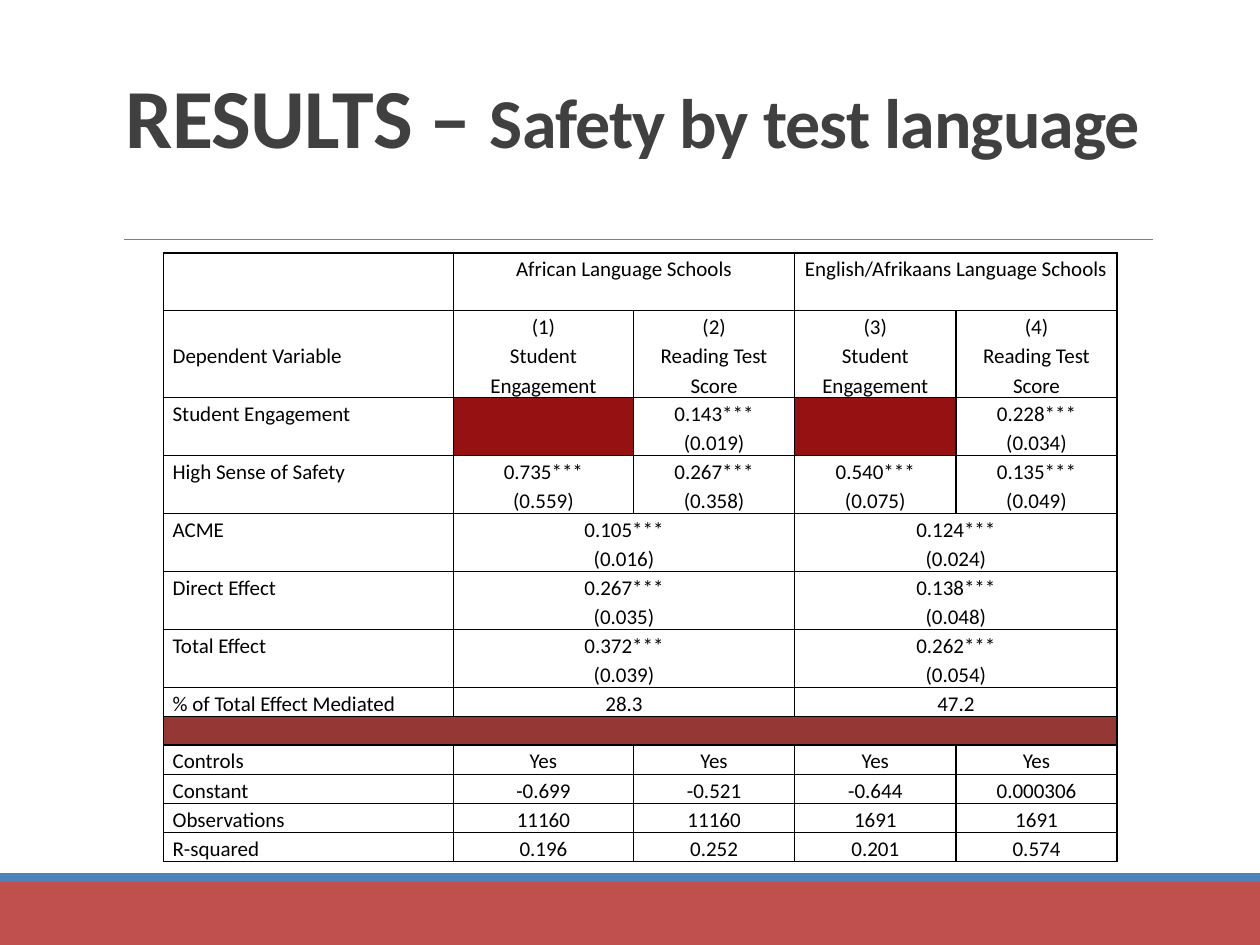
from lxml import etree
from pptx import Presentation
from pptx.dml.color import RGBColor
from pptx.enum.shapes import MSO_CONNECTOR, MSO_SHAPE
from pptx.enum.text import MSO_ANCHOR, PP_ALIGN
from pptx.oxml.ns import qn
from pptx.util import Cm, Pt

RECT = MSO_SHAPE.RECTANGLE
STRAIGHT = MSO_CONNECTOR.STRAIGHT
LEFT, CENTER = PP_ALIGN.LEFT, PP_ALIGN.CENTER
TOP, MIDDLE, BOTTOM = MSO_ANCHOR.TOP, MSO_ANCHOR.MIDDLE, MSO_ANCHOR.BOTTOM

FONT = "Calibri"
COLORS = {
    "title": "404040",
    "text": "000000",
    "rule": "808080",
    "footer": "C0504D",
    "stripe": "4F81BD",
    "empty": "961212",
    "divider": "953735",
}

COL_WIDTHS = [5.84, 3.63, 3.25, 3.25, 3.25]
LINE_HEIGHT = 0.58
ROW_LINES = [2, 3] + [2] * 5 + [1] * 6

# None continues the merged cell on its left.
ROWS = [
    ["", "African Language Schools", None, "English/Afrikaans Language Schools", None],
    ["Dependent Variable", "(1)\nStudent Engagement", "(2)\nReading Test Score",
     "(3)\nStudent Engagement", "(4)\nReading Test Score"],
    ["Student Engagement", "", "0.143***\n(0.019)", "", "0.228***\n(0.034)"],
    ["High Sense of Safety", "0.735***\n(0.559)", "0.267***\n(0.358)",
     "0.540***\n(0.075)", "0.135***\n(0.049)"],
    ["ACME", "0.105***\n(0.016)", None, "0.124***\n(0.024)", None],
    ["Direct Effect", "0.267***\n(0.035)", None, "0.138***\n(0.048)", None],
    ["Total Effect", "0.372***\n(0.039)", None, "0.262***\n(0.054)", None],
    ["% of Total Effect Mediated", "28.3", None, "47.2", None],
    ["", None, None, None, None],
    ["Controls", "Yes", "Yes", "Yes", "Yes"],
    ["Constant", "-0.699", "-0.521", "-0.644", "0.000306"],
    ["Observations", "11160", "11160", "1691", "1691"],
    ["R-squared", "0.196", "0.252", "0.201", "0.574"],
]
DEPENDENT_ROW, DIVIDER_ROW = 1, 8
FILLS = {(2, 1): "empty", (2, 3): "empty", (DIVIDER_ROW, 0): "divider"}


def rgb(name):
    return RGBColor.from_string(COLORS[name])


def add_band(slide, top, height, color):
    sp = slide.shapes.add_shape(RECT, 0, Cm(top), Cm(25.4), Cm(height))
    sp.shadow.inherit = False
    sp.fill.solid()
    sp.fill.fore_color.rgb = rgb(color)
    sp.line.fill.background()


def add_rule(slide, left, right, y):
    line = slide.shapes.add_connector(STRAIGHT, Cm(left), Cm(y), Cm(right), Cm(y))
    line.line.color.rgb = rgb("rule")
    line.line.width = Pt(0.5)
    etree.SubElement(line._element.spPr, qn("a:effectLst"))


def add_title(slide, parts):
    """Add the title from (text, size) parts."""
    tf = slide.shapes.add_textbox(Cm(2.29), Cm(0.79), Cm(20.96), Cm(4.04)).text_frame
    tf.word_wrap = True
    tf.vertical_anchor = BOTTOM
    tf.margin_right = 0
    tf.margin_bottom = Cm(1.5)
    p = tf.paragraphs[0]
    p.line_spacing = 0.85
    for text, size in parts:
        r = p.add_run()
        r.text = text
        r.font.name = FONT
        r.font.size = Pt(size)
        r.font.bold = True
        r.font.color.rgb = rgb("title")
        r._r.get_or_add_rPr().set("spc", "-50")


def set_borders(cell):
    tc_pr = cell._tc.get_or_add_tcPr()
    for side in ("lnL", "lnR", "lnT", "lnB"):
        ln = etree.SubElement(tc_pr, qn(f"a:{side}"), w=str(Pt(1)))
        fill = etree.SubElement(ln, qn("a:solidFill"))
        etree.SubElement(fill, qn("a:srgbClr"), val=COLORS["text"])


def format_cell(cell, text, align, anchor, fill):
    cell.margin_left = cell.margin_right = Cm(0.18)
    cell.margin_top = cell.margin_bottom = 0
    cell.vertical_anchor = anchor
    set_borders(cell)
    if fill:
        cell.fill.solid()
        cell.fill.fore_color.rgb = rgb(fill)
    else:
        cell.fill.background()
    cell.text_frame.text = text
    for p in cell.text_frame.paragraphs:
        p.alignment = align
        p.line_spacing = 1.15
        p.font.name = FONT
        p.font.size = Pt(12)
        p.font.color.rgb = rgb("text")
        if not text:  # keeps an empty row from growing
            etree.SubElement(p._p, qn("a:endParaRPr"), sz="1200")


def add_results_table(slide):
    frame = slide.shapes.add_table(
        len(ROWS), len(COL_WIDTHS), Cm(3.3), Cm(5.1),
        Cm(sum(COL_WIDTHS)), Cm(LINE_HEIGHT * sum(ROW_LINES)))
    table = frame.table
    table.first_row = table.horz_banding = False
    for column, width in zip(table.columns, COL_WIDTHS):
        column.width = Cm(width)
    for i, (values, lines) in enumerate(zip(ROWS, ROW_LINES)):
        table.rows[i].height = Cm(LINE_HEIGHT * lines)
        for j, text in enumerate(values):
            format_cell(table.cell(i, j), text or "",
                        CENTER if j else LEFT,
                        MIDDLE if (i, j) == (DEPENDENT_ROW, 0) else TOP,
                        FILLS.get((i, j)))
        starts = [j for j, text in enumerate(values) if text is not None]
        for start, end in zip(starts, starts[1:] + [len(values)]):
            if end - start > 1:
                table.cell(i, start).merge(table.cell(i, end - 1))


def main():
    prs = Presentation()
    prs.slide_width, prs.slide_height = Cm(25.4), Cm(19.05)
    slide = prs.slides.add_slide(prs.slide_layouts[6])
    add_band(slide, 17.78, 1.27, "footer")
    add_band(slide, 17.6, 0.18, "stripe")
    add_rule(slide, 2.49, 23.24, 4.83)
    add_title(slide, [("RESULTS – ", 48), ("Safety by test language", 40)])
    add_results_table(slide)
    prs.save("out.pptx")


if __name__ == "__main__":
    main()
